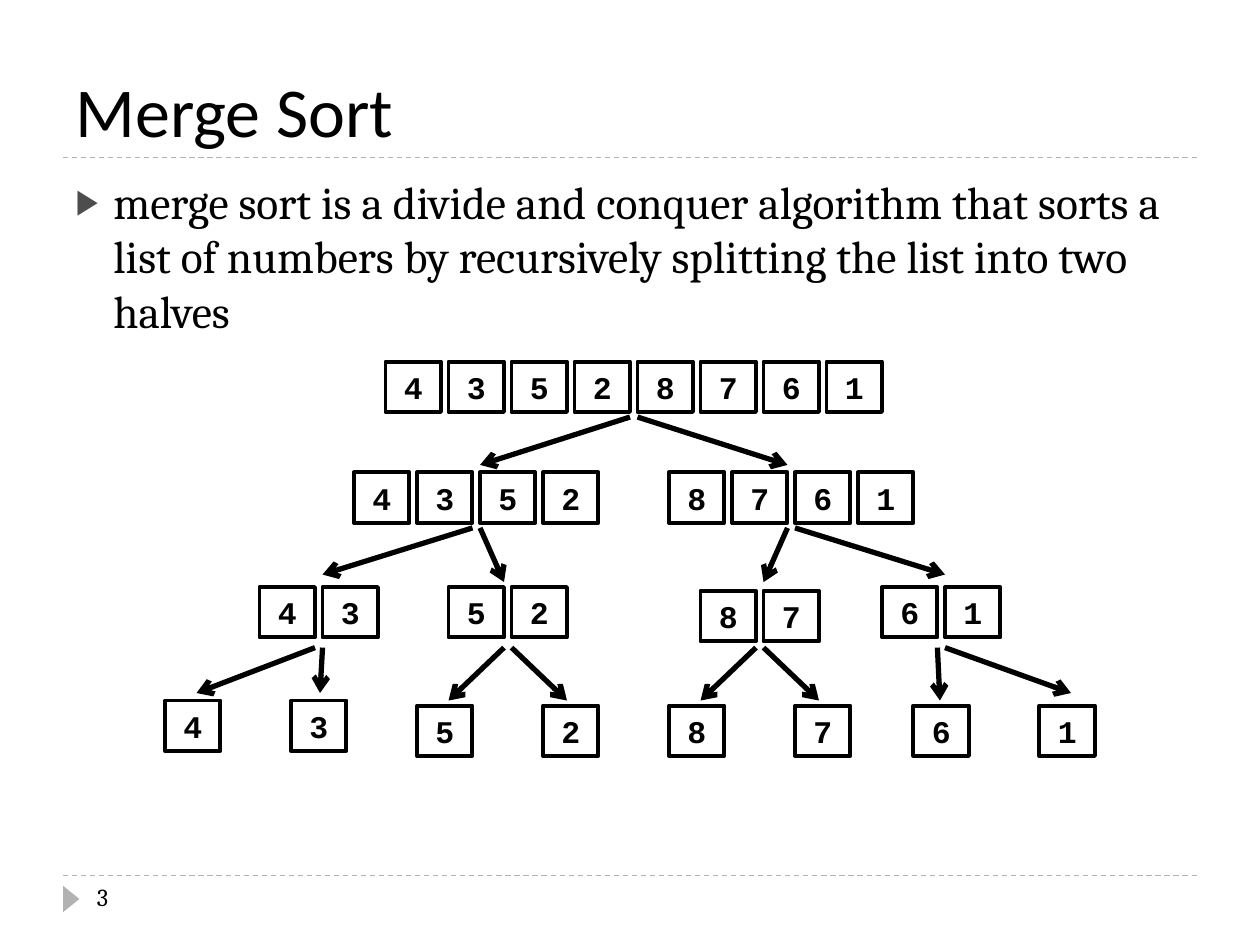
from dataclasses import dataclass

from lxml import etree
from pptx import Presentation
from pptx.dml.color import RGBColor
from pptx.enum.dml import MSO_LINE
from pptx.enum.shapes import MSO_CONNECTOR, MSO_SHAPE
from pptx.enum.text import MSO_ANCHOR, MSO_AUTO_SIZE, PP_ALIGN
from pptx.oxml.ns import qn
from pptx.util import Inches, Pt

RECTANGLE, TRIANGLE = MSO_SHAPE.RECTANGLE, MSO_SHAPE.ISOSCELES_TRIANGLE
STRAIGHT, DASH = MSO_CONNECTOR.STRAIGHT, MSO_LINE.DASH
LEFT, CENTER = PP_ALIGN.LEFT, PP_ALIGN.CENTER
TOP, MIDDLE, BOTTOM = MSO_ANCHOR.TOP, MSO_ANCHOR.MIDDLE, MSO_ANCHOR.BOTTOM
FIXED_SIZE = MSO_AUTO_SIZE.NONE

# The slide is a grid of 20 columns and 15 rows; one list cell per column.
COLUMNS, ROWS = 20, 15
CELL_WIDTH, CELL_HEIGHT = 0.88, 0.8
ARROW_OFFSET = 0.06
SPLIT_ROW = {8: 6.62, 4: 8.38, 2: 10.28}  # where arrows leave, by list length


@dataclass(frozen=True)
class Theme:
    ink: str = "000000"
    rule: str = "B2B2B2"
    bullet: str = "4D4D4D"
    title_font: str = "Calibri"
    body_font: str = "Cambria"
    cell_font: str = "Courier New"
    title_size: int = 40
    body_size: int = 26
    cell_size: int = 18
    number_size: int = 14
    rule_width: float = 0.75
    cell_border: float = 2.25
    arrow_width: float = 3


@dataclass(frozen=True)
class Sublist:
    """A list in the tree; tip is where the arrow from its parent ends."""
    digits: str
    left: float
    top: float
    tip: tuple = ()
    halves: tuple = ()

    @property
    def center(self):
        return self.left + (len(self.digits) - 1 + CELL_WIDTH) / 2

    def descend(self):
        """Yield this list and every list below it."""
        yield self
        for half in self.halves:
            yield from half.descend()


class SlideBuilder:
    def __init__(self, presentation, theme):
        self.theme = theme
        self.slide = presentation.slides.add_slide(presentation.slide_layouts[1])
        self.column = presentation.slide_width / COLUMNS
        self.row = presentation.slide_height / ROWS

    def x(self, columns):
        return round(columns * self.column)

    def y(self, rows):
        return round(rows * self.row)

    def box(self, left, top, width, height):
        return self.x(left), self.y(top), self.x(width), self.y(height)

    def set_text(self, shape, text, font, size, anchor=TOP, align=LEFT, bold=False, wrap=True):
        frame = shape.text_frame
        frame.text = text
        frame.auto_size = FIXED_SIZE
        frame.word_wrap = wrap
        frame.vertical_anchor = anchor
        paragraph = frame.paragraphs[0]
        paragraph.alignment = align
        run_font = paragraph.runs[0].font
        run_font.name, run_font.size, run_font.bold = font, Pt(size), bold
        run_font.color.rgb = RGBColor.from_string(self.theme.ink)
        return paragraph

    def place(self, placeholder, *area):
        placeholder.left, placeholder.top, placeholder.width, placeholder.height = self.box(*area)
        return placeholder

    def title(self, text, *area):
        heading = self.place(self.slide.shapes.title, *area)
        self.set_text(heading, text, self.theme.title_font, self.theme.title_size, BOTTOM)

    def body(self, text, *area):
        body = self.place(self.slide.placeholders[1], *area)
        paragraph = self.set_text(body, text, self.theme.body_font, self.theme.body_size)
        paragraph.space_before = Pt(6)
        self.bullet(paragraph)

    def bullet(self, paragraph):
        properties = paragraph._p.get_or_add_pPr()
        properties.set("marL", str(Inches(0.3)))
        properties.set("indent", str(-Inches(0.3)))
        color = etree.SubElement(properties, qn("a:buClr"))
        etree.SubElement(color, qn("a:srgbClr"), val=self.theme.bullet)
        etree.SubElement(properties, qn("a:buSzPct"), val="76000")
        etree.SubElement(properties, qn("a:buChar"), char="▶")

    def number(self, text, *area):
        label = self.slide.shapes.add_textbox(*self.box(*area))
        self.set_text(label, text, self.theme.body_font, self.theme.number_size)

    def marker(self, *area):
        marker = self.slide.shapes.add_shape(TRIANGLE, *self.box(*area))
        marker.shadow.inherit = False
        marker.rotation = 90
        marker.fill.solid()
        marker.fill.fore_color.rgb = RGBColor.from_string(self.theme.rule)
        marker.line.fill.background()

    def line(self, start, end, color, width):
        line = self.slide.shapes.add_connector(
            STRAIGHT, self.x(start[0]), self.y(start[1]), self.x(end[0]), self.y(end[1]))
        line.line.color.rgb = RGBColor.from_string(color)
        line.line.width = Pt(width)
        etree.SubElement(line._element.spPr, qn("a:effectLst"))
        return line

    def rule(self, row):
        rule = self.line((1, row), (COLUMNS - 1, row), self.theme.rule, self.theme.rule_width)
        rule.line.dash_style = DASH

    def arrow(self, start, end):
        arrow = self.line(start, end, self.theme.ink, self.theme.arrow_width)
        outline = arrow._element.spPr.find(qn("a:ln"))
        etree.SubElement(outline, qn("a:tailEnd"), type="arrow")

    def cell(self, digit, left, top):
        cell = self.slide.shapes.add_shape(
            RECTANGLE, *self.box(left, top, CELL_WIDTH, CELL_HEIGHT))
        cell.shadow.inherit = False
        cell.fill.background()
        cell.line.color.rgb = RGBColor.from_string(self.theme.ink)
        cell.line.width = Pt(self.theme.cell_border)
        self.set_text(cell, digit, self.theme.cell_font, self.theme.cell_size,
                      MIDDLE, CENTER, bold=True, wrap=False)

    def tree(self, root):
        sublists = list(root.descend())
        for sublist in sublists:
            for index, digit in enumerate(sublist.digits):
                self.cell(digit, sublist.left + index, sublist.top)
        for sublist in sublists:
            for half, side in zip(sublist.halves, (-1, 1)):
                start = sublist.center + side * ARROW_OFFSET
                self.arrow((start, SPLIT_ROW[len(sublist.digits)]), half.tip)


SPLITS = Sublist("43528761", 6.12, 5.74, halves=(
    Sublist("4352", 5.62, 7.5, (7.62, 7.38), (
        Sublist("43", 4.12, 9.32, (5.12, 9.12), (
            Sublist("4", 2.62, 11.12, (3.12, 11)),
            Sublist("3", 4.62, 11.12, (5.08, 11)))),
        Sublist("52", 7.12, 9.32, (8, 9.24), (
            Sublist("5", 6.62, 11.2, (7.12, 11.12)),
            Sublist("2", 8.62, 11.2, (9, 11.12)))))),
    Sublist("8761", 10.62, 7.5, (12.5, 7.38), (
        Sublist("87", 11.12, 9.38, (12.12, 9.24), (
            Sublist("8", 10.62, 11.2, (11.12, 11.12)),
            Sublist("7", 12.62, 11.2, (13, 11.12)))),
        Sublist("61", 14, 9.32, (15, 9.12), (
            Sublist("6", 14.5, 11.2, (14.92, 11.12)),
            Sublist("1", 16.5, 11.2, (17, 11))))))))


def main():
    presentation = Presentation()
    presentation.slide_width, presentation.slide_height = Inches(10), Inches(7.5)
    builder = SlideBuilder(presentation, Theme())
    builder.rule(13.9)
    builder.rule(2.5)
    builder.marker(0.92, 14.14, 0.42, 0.26)
    builder.title("Merge Sort", 1, 0.34, 18, 2.16)
    builder.body("merge sort is a divide and conquer algorithm that sorts a list of numbers "
                 "by recursively splitting the list into two halves", 1, 2.66, 18, 10.8)
    builder.number("3", 1.34, 13.9, 4.34, 0.8)
    builder.tree(SPLITS)
    presentation.save("out.pptx")


if __name__ == "__main__":
    main()
